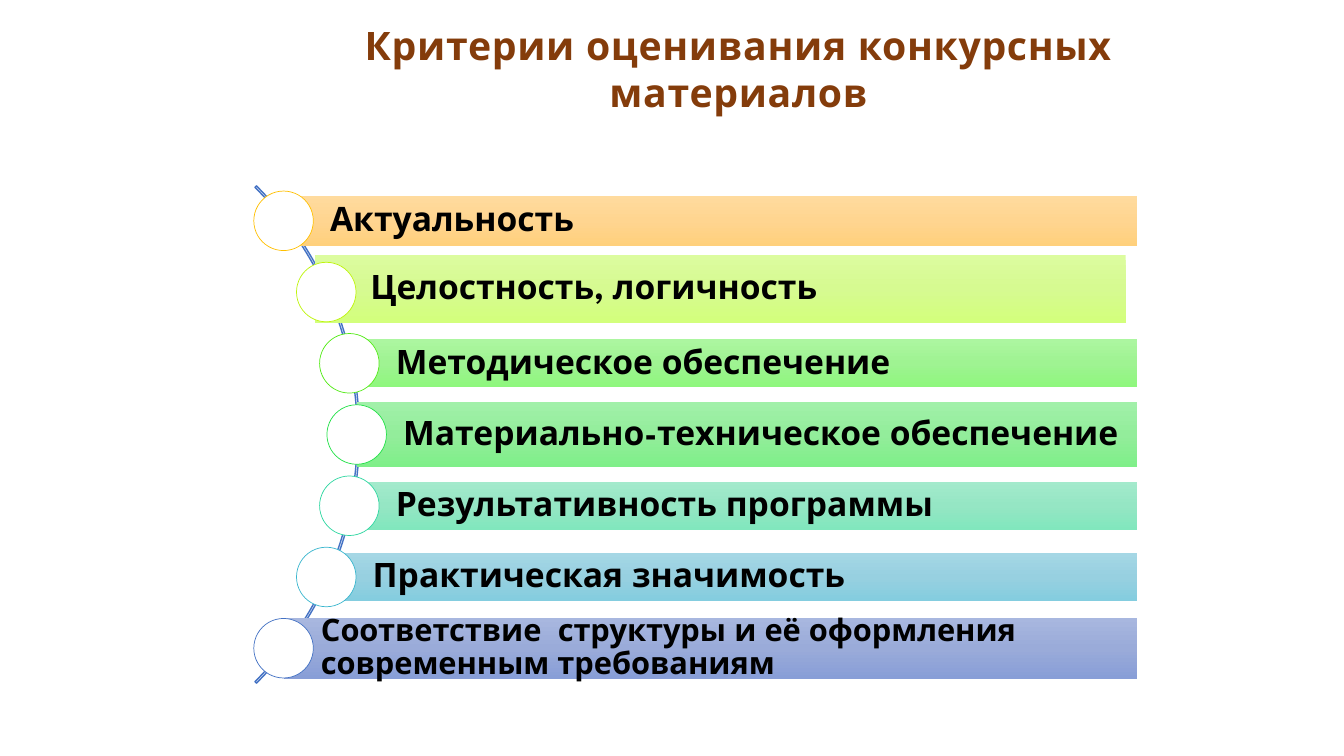
from copy import deepcopy
from math import sqrt

from pptx import Presentation
from pptx.dml.color import RGBColor as RGB
from pptx.enum.shapes import MSO_SHAPE as SHAPE
from pptx.enum.text import MSO_ANCHOR as ANCHOR, PP_ALIGN as ALIGN
from pptx.oxml.ns import qn
from pptx.util import Cm, Pt

FONT = "League Spartan"
BROWN = RGB(0x84, 0x3C, 0x0B)
BLACK = RGB(0, 0, 0)
WHITE = RGB(255, 255, 255)
BLUE = RGB(0x44, 0x72, 0xC4)
GOLD = RGB(0xFF, 0xC0, 0x00)
LIME = RGB(0xBE, 0xF5, 0x0C)
GREEN = RGB(0x53, 0xEB, 0x17)
EMERALD = RGB(0x23, 0xE1, 0x48)
MINT = RGB(0x2E, 0xD7, 0xA1)
CYAN = RGB(0x39, 0xB6, 0xCE)
GOLD_FADE = RGB(0xFF, 0xDB, 0x9E), RGB(0xFF, 0xD5, 0x90), RGB(0xFF, 0xD0, 0x7C)
LIME_FADE = RGB(0xDC, 0xFC, 0x9F), RGB(0xD6, 0xFA, 0x91), RGB(0xD3, 0xFF, 0x7C)
GREEN_FADE = RGB(0xAC, 0xF6, 0xA0), RGB(0x9F, 0xF3, 0x92), RGB(0x8E, 0xF7, 0x7D)
EMERALD_FADE = RGB(0xA1, 0xF0, 0xA9), RGB(0x93, 0xED, 0x9B), RGB(0x7F, 0xEF, 0x89)
MINT_FADE = RGB(0xA3, 0xEA, 0xCC), RGB(0x95, 0xE6, 0xC4), RGB(0x81, 0xE7, 0xBD)
CYAN_FADE = RGB(0xA5, 0xD7, 0xE5), RGB(0x97, 0xD0, 0xE0), RGB(0x84, 0xCD, 0xDF)
BLUE_FADE = RGB(0xA8, 0xB7, 0xDF), RGB(0x9A, 0xAB, 0xD9), RGB(0x88, 0x9E, 0xD7)

TITLE = "Критерии оценивания конкурсных материалов"
# text, size, bar height, text inset, bar shift, circle line, bar gradient
CRITERIA = [
    ("Актуальность", 24, 1.26, 1.17, (0, 0), GOLD, GOLD_FADE),
    ("Целостность, логичность", 24, 1.7, 1.4, (-0.29, -0.08), LIME, LIME_FADE),
    ("Методическое обеспечение", 24, 1.2, 1.17, (0, 0), GREEN, GREEN_FADE),
    ("Материально-техническое обеспечение", 24, 1.64, 1.17, (0, 0), EMERALD, EMERALD_FADE),
    ("Результативность программы", 24, 1.2, 1.17, (0, 0), MINT, MINT_FADE),
    ("Практическая значимость", 24, 1.2, 1.17, (0, 0), CYAN, CYAN_FADE),
    ("Соответствие  структуры и её оформления современным требованиям",
     22, 1.53, 0.94, (0, 0), BLUE, BLUE_FADE),
]


def set_text(tf, text, size, color, align):
    """Write one bold paragraph and return its run."""
    tf.word_wrap = True
    tf.text = text
    p = tf.paragraphs[0]
    p.alignment = align
    r = p.runs[0]
    r.font.name, r.font.size, r.font.bold = FONT, Pt(size), True
    r.font.color.rgb = color
    return r


def add_shape(slide, kind, left, top, width, height):
    """Add a preset shape, in centimetres, without a shadow."""
    sp = slide.shapes.add_shape(kind, Cm(left), Cm(top), Cm(width), Cm(height))
    sp.shadow.inherit = False
    return sp


def set_gradient(sp, colors):
    """Fill a shape from top to bottom with three colours."""
    sp.fill.gradient()
    sp.fill.gradient_angle = 270
    stops = sp._element.spPr.find(".//" + qn("a:gsLst"))
    stops.insert(1, deepcopy(stops[0]))
    for i, (stop, color) in enumerate(zip(sp.fill.gradient_stops, colors)):
        stop.position = i / 2
        stop.color.rgb = color


def add_title(slide, left, top, width, height):
    """Add the centred slide title."""
    s = slide.shapes.add_textbox(Cm(left), Cm(top), Cm(width), Cm(height))
    r = set_text(s.text_frame, TITLE, 28, BROWN, ALIGN.CENTER)
    r.font._element.set("spc", "50")


def add_bar(slide, left, top, width, height, text, size, inset, fade):
    """Add one criterion bar with its text."""
    sp = add_shape(slide, SHAPE.RECTANGLE, left, top, width, height)
    set_gradient(sp, fade)
    sp.line.fill.background()
    tf = sp.text_frame
    set_text(tf, text, size, BLACK, ALIGN.LEFT)
    tf.paragraphs[0].line_spacing = 0.9
    tf.vertical_anchor = ANCHOR.MIDDLE
    tf.margin_left = Cm(inset)
    tf.margin_right = tf.margin_top = tf.margin_bottom = Cm(0.16)


def add_circle(slide, cx, cy, diameter, color):
    """Add a white circle around a centre point."""
    sp = add_shape(slide, SHAPE.OVAL, cx - diameter / 2, cy - diameter / 2, diameter, diameter)
    sp.fill.solid()
    sp.fill.fore_color.rgb = WHITE
    sp.line.color.rgb = color
    sp.line.width = Pt(0.5)


def add_criteria(slide, cx, cy, radius, right):
    """Place the criteria along an arc, with bars reaching the right edge."""
    arc = add_shape(slide, SHAPE.BLOCK_ARC, cx - radius, cy - radius, 2 * radius, 2 * radius)
    for i, value in enumerate((189, 27, 0.003)):
        arc.adjustments[i] = value
    arc.fill.background()
    arc.line.color.rgb = BLUE
    arc.line.width = Pt(1)

    pitch, track = 1.795, radius - 0.07
    for i, (text, size, height, inset, (dx, dy), color, fade) in enumerate(CRITERIA):
        rise = (i - (len(CRITERIA) - 1) / 2) * pitch
        x, y = cx + sqrt(track ** 2 - rise ** 2), cy + rise
        add_bar(slide, x + dx, y + dy - height / 2, right - x, height, text, size, inset, fade)
        add_circle(slide, x, y, 1.5, color)


def main():
    """Build and save the slide."""
    prs = Presentation()
    prs.slide_width, prs.slide_height = Cm(33.87), Cm(19.05)
    slide = prs.slides.add_slide(prs.slide_layouts[6])
    add_title(slide, 8.2, 0.41, 20.83, 2.64)
    add_criteria(slide, 0.2, 10.95, 8.86, 28.66)
    prs.save("out.pptx")


if __name__ == "__main__":
    main()
